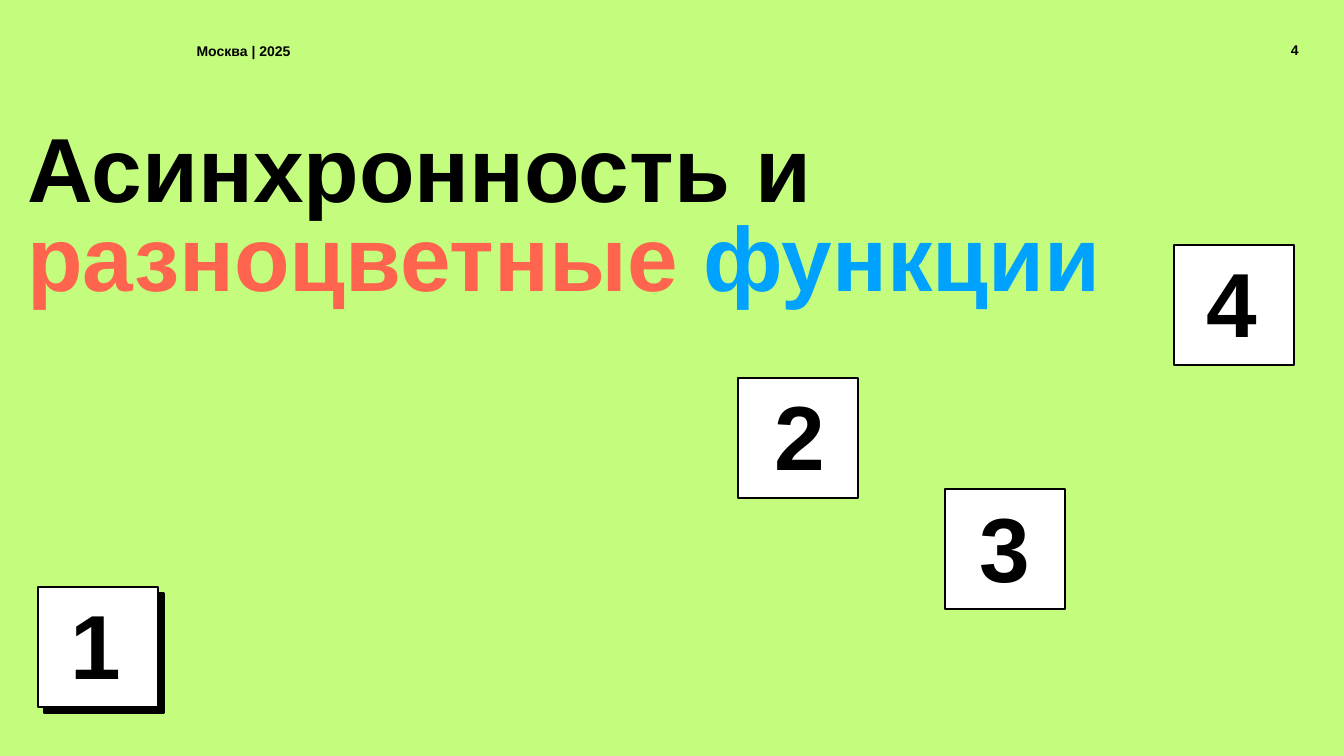
from lxml import etree
from pptx import Presentation, util as u
from pptx.dml.color import RGBColor
from pptx.enum import shapes, text
from pptx.oxml.ns import qn

COLUMNS, ROWS = 26.67, 15
CARD_SIZE = 2.38
CARDS = [
    ("1", 0.75, 11.64, 0.59, 0.37, True),
    ("2", 14.65, 7.5, 0.66, 0.35, False),
    ("3", 18.75, 9.7, 0.63, 0.37, False),
    ("4", 23.3, 4.86, 0.59, 0.35, False),
]


def color(value):
    return RGBColor.from_string(value)


def assign(target, values):
    for name, value in values.items():
        setattr(target, name, value)


class SlideBuilder:
    black, white, lime = "000000", "FFFFFF", "C4FD7D"
    coral, blue = "FF644E", "00A2FF"
    font = {"name": "Arial", "bold": True}
    small, huge = 20, 130
    tight = 0.82

    def __init__(self, presentation):
        self.cell_width = presentation.slide_width / COLUMNS
        self.cell_height = presentation.slide_height / ROWS
        self.slide = presentation.slides.add_slide(presentation.slide_layouts[5])
        fill = self.slide.background.fill
        fill.solid()
        fill.fore_color.rgb = color(self.lime)

    def box(self, column, row, width, height):
        return (
            u.Emu(round(column * self.cell_width)),
            u.Emu(round(row * self.cell_height)),
            u.Emu(round(width * self.cell_width)),
            u.Emu(round(height * self.cell_height)),
        )

    def set_text(self, shape, runs, size, spacing=1.0, align="LEFT", anchor="TOP", insets=(0.06, 0.06)):
        frame = shape.text_frame
        side, top = (u.Inches(inset) for inset in insets)
        assign(frame, {
            "word_wrap": True,
            "auto_size": text.MSO_AUTO_SIZE.SHAPE_TO_FIT_TEXT,
            "vertical_anchor": text.MSO_ANCHOR[anchor],
            "margin_left": side, "margin_right": side,
            "margin_top": top, "margin_bottom": top,
        })
        paragraph = frame.paragraphs[0]
        assign(paragraph, {"alignment": text.PP_ALIGN[align], "line_spacing": spacing})
        for content, run_color in runs:
            run = paragraph.add_run()
            run.text = content
            assign(run.font, {**self.font, "size": u.Pt(size)})
            run.font.color.rgb = color(run_color)

    def title(self, place, runs):
        title = self.slide.shapes.title
        assign(title, dict(zip(("left", "top", "width", "height"), self.box(*place))))
        self.set_text(title, runs, self.huge, self.tight, insets=(0.1, 0.05))

    def label(self, place, content, size, **layout):
        label = self.slide.shapes.add_textbox(*self.box(*place))
        self.set_text(label, [(content, self.black)], size, **layout)

    def card(self, number, column, row, indent, drop, raised):
        square = self.slide.shapes.add_shape(
            shapes.MSO_SHAPE.RECTANGLE, *self.box(column, row, CARD_SIZE, CARD_SIZE))
        square.shadow.inherit = False
        square.fill.solid()
        square.fill.fore_color.rgb = color(self.white)
        square.line.color.rgb = color(self.black)
        square.line.width = u.Pt(3)
        if raised:
            self.hard_shadow(square)
        self.label((column + indent, row + drop, 1.13, 1.91), number, self.huge, spacing=self.tight)

    def hard_shadow(self, shape):
        effects = shape._element.spPr.find(qn("a:effectLst"))
        shadow = etree.SubElement(effects, qn("a:outerShdw"), {
            "blurRad": "0", "dist": str(u.Pt(12)), "dir": str(46 * 60000),
            "algn": "tl", "rotWithShape": "0",
        })
        etree.SubElement(shadow, qn("a:srgbClr"), val=self.black)


def main():
    presentation = Presentation()
    presentation.slide_width = u.Inches(COLUMNS)
    presentation.slide_height = u.Inches(ROWS)
    builder = SlideBuilder(presentation)
    builder.label((3.84, 0.79, 2.77, 0.45), "Москва | 2025", builder.small)
    builder.label((25.52, 0.77, 0.31, 0.45), "4", builder.small, align="RIGHT", anchor="BOTTOM")
    builder.title((0.44, 2.54, 24.86, 3.7), [
        ("Асинхронность и ", builder.black),
        ("разноцветные ", builder.coral),
        ("функции", builder.blue),
    ])
    for card in CARDS:
        builder.card(*card)
    presentation.save("out.pptx")


if __name__ == "__main__":
    main()
